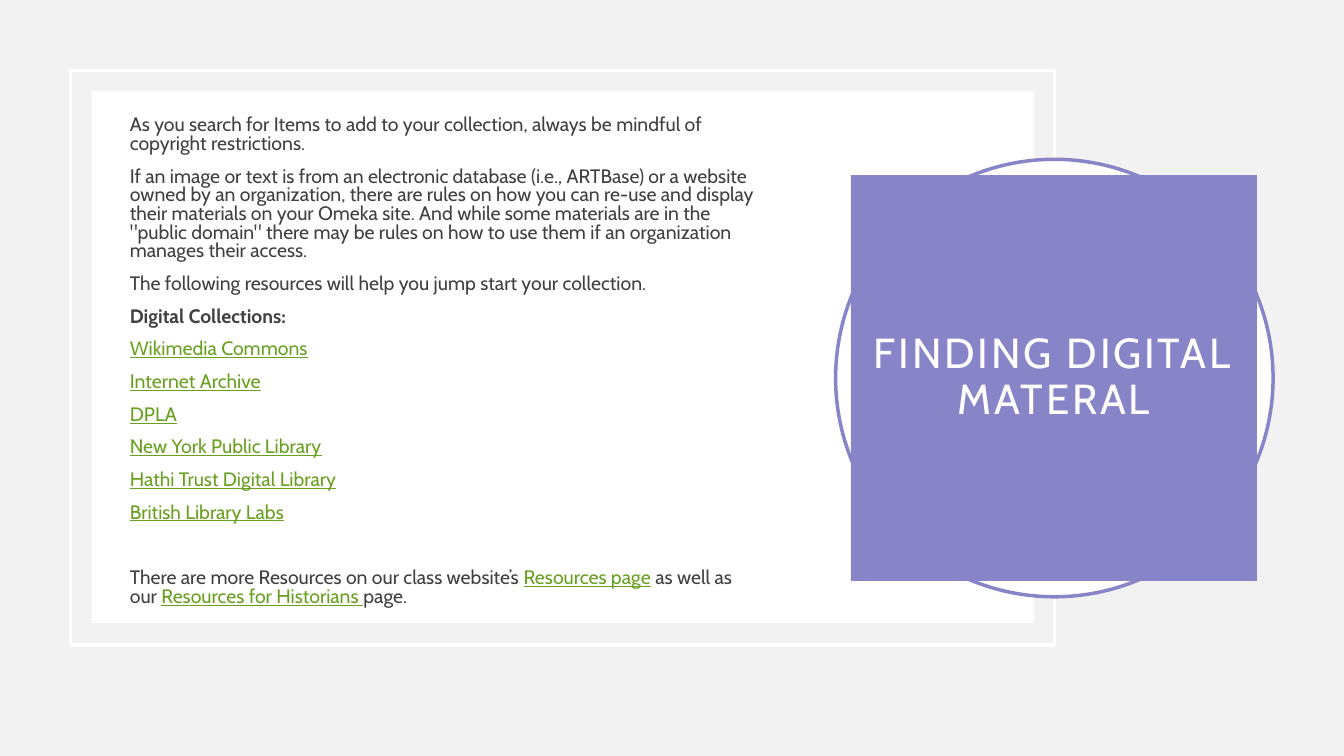
import pptx
import pptx.util
import pptx.dml.color
import pptx.enum.shapes
import pptx.enum.text

Pt = pptx.util.Pt
RGBColor = pptx.dml.color.RGBColor
RECTANGLE = pptx.enum.shapes.MSO_SHAPE.RECTANGLE
OVAL = pptx.enum.shapes.MSO_SHAPE.OVAL
ALIGN = pptx.enum.text.PP_ALIGN
ANCHOR = pptx.enum.text.MSO_ANCHOR

BACKDROP = RGBColor(0xF2, 0xF2, 0xF2)
WHITE = RGBColor(0xFF, 0xFF, 0xFF)
PURPLE = RGBColor(0x87, 0x84, 0xC7)
INK = RGBColor(0x40, 0x40, 0x40)
LINK_GREEN = RGBColor(0x69, 0xA0, 0x20)


def add_text(paragraph, text, size=13.9, color=INK, bold=False, underline=False, tracking=0):
    run = paragraph.add_run()
    run.text = text
    run.font.name = "Cabin"
    run.font.size = Pt(size)
    run.font.color.rgb = color
    run.font.bold = bold
    run.font.underline = underline
    if tracking:
        run.font._element.set("spc", str(tracking * 100))


deck = pptx.Presentation()
deck.slide_width = Pt(960)
deck.slide_height = Pt(540)
slide = deck.slides.add_slide(deck.slide_layouts[6])
slide.background.fill.solid()
slide.background.fill.fore_color.rgb = BACKDROP

panels = []
for kind, left, top, width, height, fill, outline in [
    (RECTANGLE, 50.4, 50.4, 702.7, 410.2, None, WHITE),
    (RECTANGLE, 65.5, 64.8, 673.2, 380.2, WHITE, None),
    (OVAL, 596.9, 113.8, 312.5, 312.5, WHITE, PURPLE),
    (RECTANGLE, 607.8, 125, 290, 290, PURPLE, None),
]:
    panel = slide.shapes.add_shape(kind, Pt(left), Pt(top), Pt(width), Pt(height))
    panel.shadow.inherit = False
    if fill is None:
        panel.fill.background()
    else:
        panel.fill.solid()
        panel.fill.fore_color.rgb = fill
    if outline is None:
        panel.line.fill.background()
    else:
        panel.line.color.rgb = outline
        panel.line.width = Pt(2.5)
    panels.append(panel)

title = panels[-1].text_frame
title.word_wrap = True
title.vertical_anchor = ANCHOR.MIDDLE
title.margin_left = title.margin_right = title.margin_top = title.margin_bottom = Pt(14.4)
title.paragraphs[0].alignment = ALIGN.CENTER
title.paragraphs[0].line_spacing = 0.9
add_text(title.paragraphs[0], "FINDING DIGITAL MATERAL", size=30, color=WHITE, tracking=2)

plain = {}
heading = {"bold": True}
link = {"color": LINK_GREEN, "underline": True}
collections = [
    "Wikimedia Commons",
    "Internet Archive",
    "DPLA",
    "New York Public Library",
    "Hathi Trust Digital Library",
    "British Library Labs",
]
guidance = [
    [("As you search for Items to add to your collection, always be mindful of "
      "copyright restrictions.", plain)],
    [("If an image or text is from an electronic database (i.e., ARTBase) or a website "
      "owned by an organization, there are rules on how you can re-use and display "
      "their materials on your Omeka site. And while some materials are in the "
      "\"public domain\" there may be rules on how to use them if an organization "
      "manages their access.", plain)],
    [("The following resources will help you jump start your collection.", plain)],
    [("Digital Collections:", heading)],
    *[[(collection, link)] for collection in collections],
    [("There are more Resources on our class website’s ", plain),
     ("Resources page", link),
     (" as well as our ", plain),
     ("Resources for Historians ", link),
     ("page.", plain)],
]

body = slide.shapes.add_textbox(Pt(85.7), Pt(80), Pt(465.8), Pt(365)).text_frame
body.word_wrap = True
body.vertical_anchor = ANCHOR.TOP
for index, passage in enumerate(guidance):
    paragraph = body.add_paragraph() if index else body.paragraphs[0]
    paragraph.line_spacing = 0.8
    if index:
        paragraph.space_before = Pt(10)
    for text, style in passage:
        add_text(paragraph, text, **style)
body.paragraphs[-1].space_before = Pt(33.4)

deck.save("out.pptx")
